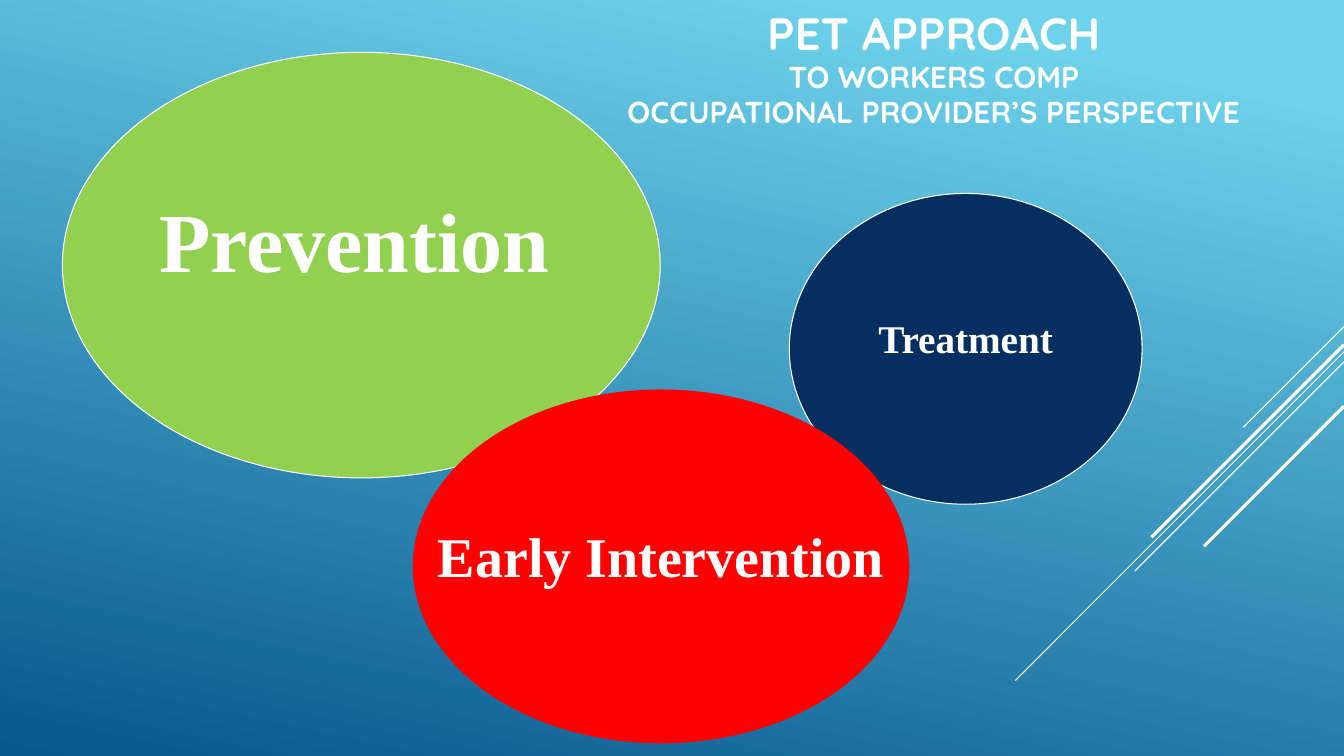
from dataclasses import dataclass

from lxml import etree
from pptx import Presentation
from pptx import util as u
from pptx.dml.color import RGBColor
from pptx.enum import shapes, text
from pptx.oxml import ns

Pt = u.Pt
WHITE = "FFFFFF"
SLIDE_W, SLIDE_H = 960, 540


@dataclass
class Bubble:
    label: str
    left: float
    top: float
    width: float
    height: float
    fill: str
    line: str
    size: float
    lift: float  # extra bottom inset that raises the label
    shift: float = 0  # extra right inset that moves the label left


@dataclass
class Streak:
    """A 45-degree line running down-left from the right edge."""
    top: float
    run: float
    weight: float


BUBBLES = [
    Bubble("Prevention", 44.6, 37.4, 427, 304, "92D050", WHITE, 60, 36.8, 10),
    Bubble("Treatment", 563.8, 138.2, 252, 222, "052F61", WHITE, 28, 16),
    Bubble("Early Intervention", 295.2, 278.6, 354, 252, "FF0000", "FF0000", 40, 16),
]

STREAKS = [
    Streak(233.3, 72, 0.75),
    Streak(251.3, 234.7, 0.75),
    Streak(258.5, 149.4, 0.75),
    Streak(246.2, 137.5, 2.25),
    Streak(290.2, 100, 2.25),
]

TITLE_LINES = [
    ("PET APPROACH", 32.4),
    ("TO WORKERS COMP", 21.6),
    ("OCCUPATIONAL PROVIDER’S PERSPECTIVE", 21.6),
]


def rgb(value: str) -> RGBColor:
    return RGBColor.from_string(value)


def set_attrs(obj, values: dict) -> None:
    for name, value in values.items():
        setattr(obj, name, value)


def format_run(r, name: str, size: float) -> None:
    set_attrs(r.font, {"name": name, "size": Pt(size), "bold": True})
    r.font.color.rgb = rgb(WHITE)


def paint_background(s) -> None:
    fill = s.background.fill
    fill.gradient()
    fill.gradient_angle = 258  # counter-clockwise
    stops = [(0.1, "6ED2EB"), (1, "06588E")]
    for stop, (position, color) in zip(fill.gradient_stops, stops):
        stop.position = position
        stop.color.rgb = rgb(color)


def add_streak(s, streak: Streak) -> None:
    line = s.shapes.add_connector(
        shapes.MSO_CONNECTOR.STRAIGHT, Pt(SLIDE_W), Pt(streak.top),
        Pt(SLIDE_W - streak.run), Pt(streak.top + streak.run))
    line.line.color.rgb = rgb(WHITE)
    line.line.width = Pt(streak.weight)
    etree.SubElement(line._element.spPr, ns.qn("a:effectLst"))


def fill_title(s) -> None:
    sp = s.shapes.title
    set_attrs(sp, {"left": Pt(411.8), "top": Pt(0),
                   "width": Pt(510.5), "height": Pt(99.4)})
    tf = sp.text_frame
    set_attrs(tf, {"word_wrap": True, "auto_size": text.MSO_AUTO_SIZE.NONE,
                   "vertical_anchor": text.MSO_ANCHOR.MIDDLE})
    p = tf.paragraphs[0]
    set_attrs(p, {"alignment": text.PP_ALIGN.CENTER, "line_spacing": 0.95})
    for i, (line, size) in enumerate(TITLE_LINES):
        if i:
            p.add_line_break()
        r = p.add_run()
        r.text = line
        format_run(r, "Quicksand", size)


def add_bubble(s, bubble: Bubble) -> None:
    sp = s.shapes.add_shape(
        shapes.MSO_SHAPE.OVAL, Pt(bubble.left), Pt(bubble.top),
        Pt(bubble.width), Pt(bubble.height))
    sp.shadow.inherit = False
    sp.fill.solid()
    sp.fill.fore_color.rgb = rgb(bubble.fill)
    sp.line.color.rgb = rgb(bubble.line)
    sp.line.width = Pt(0.75)
    tf = sp.text_frame
    set_attrs(tf, {"word_wrap": False, "vertical_anchor": text.MSO_ANCHOR.MIDDLE,
                   "margin_top": Pt(0), "margin_bottom": Pt(bubble.lift),
                   "margin_left": Pt(0), "margin_right": Pt(bubble.shift)})
    p = tf.paragraphs[0]
    p.alignment = text.PP_ALIGN.CENTER
    r = p.add_run()
    r.text = bubble.label
    format_run(r, "Times New Roman", bubble.size)


def main() -> None:
    prs = Presentation()
    set_attrs(prs, {"slide_width": Pt(SLIDE_W), "slide_height": Pt(SLIDE_H)})
    s = prs.slides.add_slide(prs.slide_layouts.get_by_name("Title Only"))
    paint_background(s)
    for streak in STREAKS:
        add_streak(s, streak)
    fill_title(s)
    for bubble in BUBBLES:
        add_bubble(s, bubble)
    prs.save("out.pptx")


if __name__ == "__main__":
    main()
